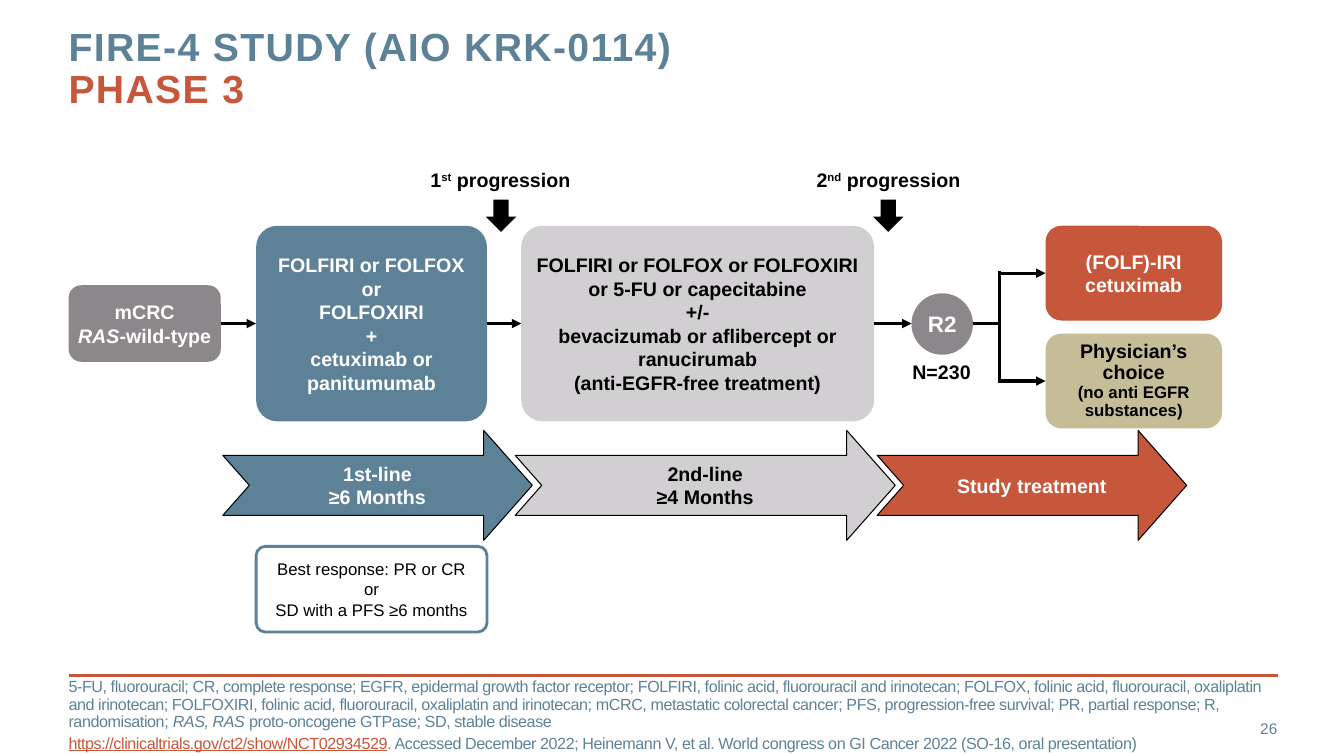
import pptx
import pptx.util
import pptx.dml.color
import pptx.enum.shapes
import pptx.enum.text
import pptx.oxml.ns
import lxml.etree

Inches = pptx.util.Inches
SHAPE = pptx.enum.shapes.MSO_SHAPE
ALIGN = pptx.enum.text.PP_ALIGN
ANCHOR = pptx.enum.text.MSO_ANCHOR

BLUE, RED, GREY, SILVER, TAN = "5D8298", "C6573B", "8B878B", "D1CFD1", "C4BD97"
BLACK, WHITE = "000000", "FFFFFF"
AXIS = 3.21


def rgb(color):
    return pptx.dml.color.RGBColor.from_string(color)


def run(text, **fmt):
    return text, fmt


class Slide:
    font = "Arial"

    def __init__(self, s):
        self.s = s

    def set_text(self, sp, paragraphs, align=ALIGN.LEFT, anchor=ANCHOR.TOP, insets=(0.1, 0.05),
                 wrap=True, spacing=None, before=0, **base):
        tf = sp.text_frame
        tf.word_wrap = wrap
        tf.vertical_anchor = anchor
        tf.margin_left = tf.margin_right = Inches(insets[0])
        tf.margin_top = tf.margin_bottom = Inches(insets[1])
        for i, runs in enumerate(paragraphs):
            p = tf.paragraphs[0] if i == 0 else tf.add_paragraph()
            p.alignment = align
            if spacing:
                p.line_spacing = spacing
            if i:
                p.space_before = pptx.util.Pt(before)
            for text, fmt in runs:
                for j, line in enumerate(text.split("\n")):
                    if j:
                        p.add_line_break()
                    if line:
                        self.style_run(p.add_run(), line, **{**base, **fmt})

    def style_run(self, r, text, size=14, color=BLACK, bold=True, italic=False,
                  underline=False, spc=None, base=None):
        r.text = text
        f = r.font
        f.name, f.size, f.bold = self.font, pptx.util.Pt(size), bold
        f.italic, f.underline = italic, underline
        f.color.rgb = rgb(color)
        for key, value in (("spc", spc), ("baseline", base)):
            if value is not None:
                r._r.get_or_add_rPr().set(key, str(value))

    def text(self, box, paragraphs, **fmt):
        sp = self.s.shapes.add_textbox(*map(Inches, box))
        self.set_text(sp, paragraphs, **fmt)

    def shape(self, kind, box, fill, runs=(), adj=(), line=None, width=1, **fmt):
        sp = self.s.shapes.add_shape(kind, *map(Inches, box))
        sp.shadow.inherit = False
        sp.fill.solid()
        sp.fill.fore_color.rgb = rgb(fill)
        if line:
            sp.line.color.rgb = rgb(line)
            sp.line.width = pptx.util.Pt(width)
        else:
            sp.line.fill.background()
        for i, value in enumerate(adj):
            sp.adjustments[i] = value
        if runs:
            self.set_text(sp, [runs], align=ALIGN.CENTER, anchor=ANCHOR.MIDDLE, **fmt)
        return sp

    def card(self, box, fill, runs, adj=0.167, insets=(0, 0.05), **fmt):
        return self.shape(SHAPE.ROUNDED_RECTANGLE, box, fill, runs, (adj,), insets=insets, **fmt)

    def line(self, start, end, color=BLACK, width=2.25, arrow=False, source=None, target=None):
        c = self.s.shapes.add_connector(pptx.enum.shapes.MSO_CONNECTOR.STRAIGHT,
                                        *map(Inches, start + end))
        if source:
            c.begin_connect(source, 3)
        if target:
            c.end_connect(target, 1)
        c.line.color.rgb = rgb(color)
        c.line.width = pptx.util.Pt(width)
        spPr = c._element.spPr
        if arrow:
            ln = spPr.find(pptx.oxml.ns.qn("a:ln"))
            lxml.etree.SubElement(ln, pptx.oxml.ns.qn("a:tailEnd"), type="triangle")
        lxml.etree.SubElement(spPr, pptx.oxml.ns.qn("a:effectLst"))


def main():
    prs = pptx.Presentation()
    prs.slide_width, prs.slide_height = Inches(13.33), Inches(7.5)
    page = Slide(prs.slides.add_slide(prs.slide_layouts[6]))

    page.line((0.68, 6.7), (12.68, 6.7), RED, 2)
    page.text((11.81, 7.03, 0.86, 0.4), [[run("26")]], align=ALIGN.RIGHT, anchor=ANCHOR.MIDDLE,
              insets=(0, 0), size=11, color=BLUE, bold=False)
    page.text((0.68, 0.27, 9.56, 0.88),
              [[run("FIRE-4 STUDY (AIO KRK-0114)\n"), run("PHASE 3", color=RED)]],
              insets=(0, 0), spacing=pptx.util.Pt(30), size=28, color=BLUE, spc=100)
    abbreviations = (
        "5-FU, fluorouracil; CR, complete response; EGFR, epidermal growth factor receptor; "
        "FOLFIRI, folinic acid, fluorouracil and irinotecan; FOLFOX, folinic acid, fluorouracil, "
        "oxaliplatin and irinotecan; FOLFOXIRI, folinic acid, fluorouracil, oxaliplatin and "
        "irinotecan; mCRC, metastatic colorectal cancer; PFS, progression-free survival; "
        "PR, partial response; R, randomisation; ")
    page.text((0.68, 6.9, 11.99, 0.4), [
        [run(abbreviations), run("RAS, RAS", italic=True),
         run(" proto-oncogene GTPase; SD, stable disease")],
        [run("https://clinicaltrials.gov/ct2/show/NCT02934529", color=RED, underline=True),
         run(". Accessed December 2022; Heinemann V, et al. World congress on GI Cancer 2022 "
             "(SO-16, oral presentation)")],
    ], anchor=ANCHOR.MIDDLE, insets=(0, 0), spacing=0.9, before=3,
        size=11.5, color=BLUE, bold=False, spc=-30)

    for left, width, fill, color, label in (
            (2.21, 3.07, BLUE, WHITE, "1st-line\n≥6 Months"),
            (5.11, 3.77, SILVER, BLACK, "2nd-line\n≥4 Months"),
            (8.7, 3.07, RED, WHITE, "Study treatment")):
        page.shape(SHAPE.NOTCHED_RIGHT_ARROW, (left, 4.27, width, 1.09), fill, [run(label)],
                   (0.547, 0.442), BLACK, 0.75, color=color)

    for text_left, text_width, arrow_left, number, suffix in (
            (4.17, 1.61, 4.82, "1", "st"), (8, 1.71, 8.66, "2", "nd")):
        page.text((text_left, 1.62, text_width, 0.34),
                  [[run(number), run(suffix, base=30000), run(" progression")]], wrap=False)
        page.shape(SHAPE.DOWN_ARROW, (arrow_left, 1.98, 0.3, 0.32), BLACK)

    population = page.card((0.68, AXIS - 0.38, 1.51, 0.76), GREY,
                           [run("mCRC\n"), run("RAS", italic=True), run("-wild-type")],
                           color=WHITE)
    panel = dict(adj=0.108, insets=(0.08, 0.04))
    first = page.card((2.54, AXIS - 0.97, 2.29, 1.94), BLUE,
                      [run("FOLFIRI or FOLFOX or\nFOLFOXIRI\n+\ncetuximab or\npanitumumab")],
                      color=WHITE, **panel)
    second = page.card((5.17, AXIS - 0.97, 3.5, 1.94), SILVER,
                       [run("FOLFIRI or FOLFOX or FOLFOXIRI\nor 5-FU or capecitabine\n+/-\n"
                            "bevacizumab or aflibercept or\nranucirumab\n"
                            "(anti-EGFR-free treatment)")], **panel)
    page.card((2.54, 5.42, 2.29, 0.85), WHITE,
              [run("Best response: PR or CR\nor\nSD with a PFS ≥6 months")],
              line=BLUE, width=2, size=12, bold=False, **panel)
    page.shape(SHAPE.OVAL, (9.04, 2.91, 0.61, 0.61), GREY, [run("R2")], wrap=False,
               size=16, color=WHITE)
    page.text((8.95, 3.52, 0.78, 0.34), [[run("N=230")]], wrap=False)
    cetuximab = page.card((10.37, 2.24, 1.75, 0.94), RED, [run("(FOLF)-IRI\ncetuximab")],
                          color=WHITE)
    choice = page.card((10.37, 3.31, 1.75, 0.94), TAN,
                       [run("Physician’s\nchoice\n"),
                        run("(no anti EGFR\nsubstances)", size=12)], spacing=0.9)

    page.line((2.19, AXIS), (2.54, AXIS), arrow=True, source=population, target=first)
    page.line((4.83, AXIS), (5.17, AXIS), arrow=True, source=first, target=second)
    page.line((8.67, AXIS), (9.04, AXIS), arrow=True, source=second)
    page.line((9.65, AXIS), (9.91, AXIS))
    page.line((9.91, 3.8), (9.91, 2.69))
    for y, arm in ((2.71, cetuximab), (3.78, choice)):
        page.line((9.91, y), (10.37, y), arrow=True, target=arm)

    prs.save("out.pptx")


if __name__ == "__main__":
    main()
